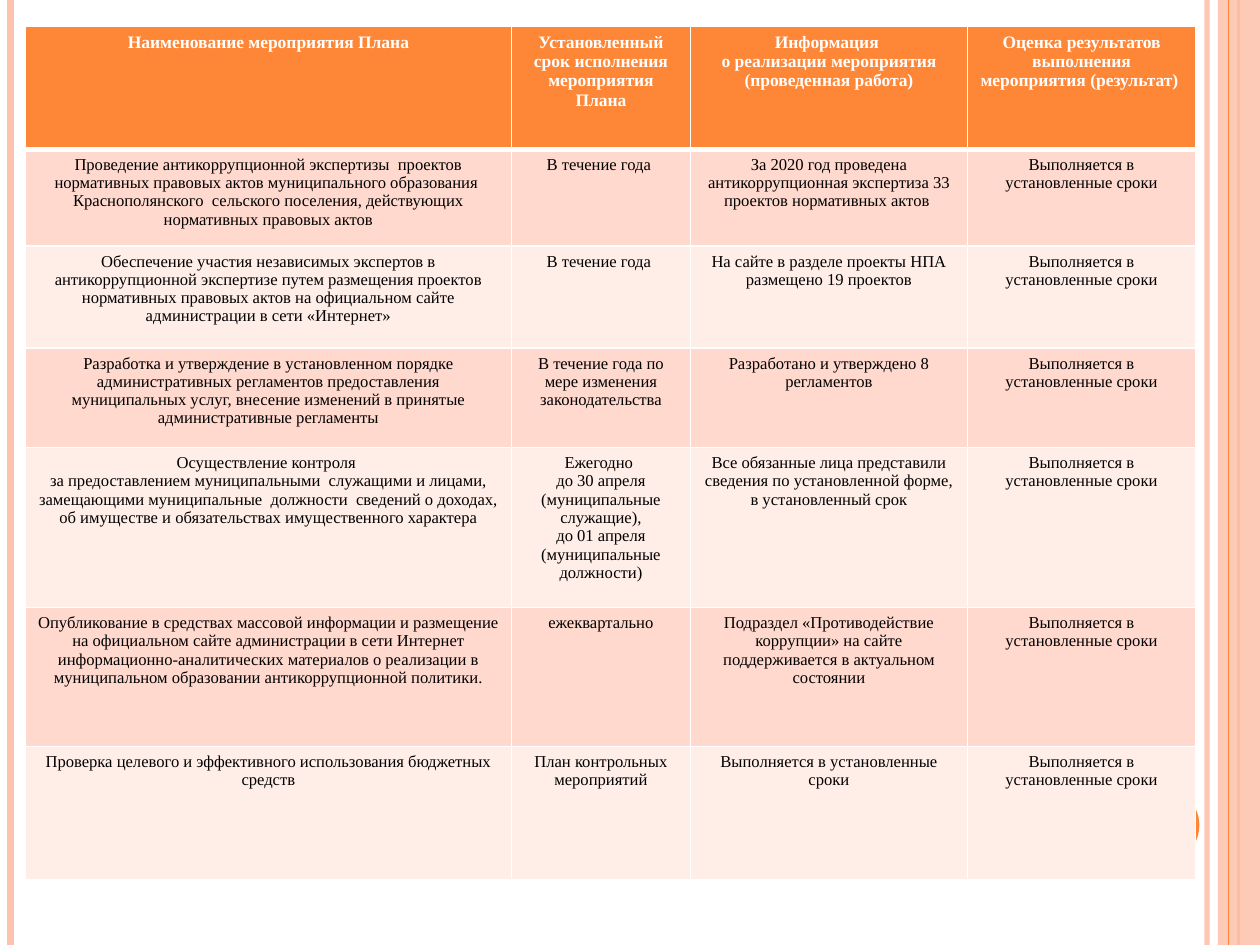
from lxml import etree
from pptx import Presentation
from pptx.dml.color import RGBColor
from pptx.enum.shapes import MSO_CONNECTOR, MSO_SHAPE
from pptx.enum.text import PP_ALIGN
from pptx.oxml.ns import qn
from pptx.util import Pt

STRAIGHT = MSO_CONNECTOR.STRAIGHT
RECT, OVAL = MSO_SHAPE.RECTANGLE, MSO_SHAPE.OVAL
CENTER = PP_ALIGN.CENTER

WHITE = RGBColor(0xFF, 0xFF, 0xFF)
BLACK = RGBColor(0x00, 0x00, 0x00)
ORANGE = RGBColor(0xFE, 0x86, 0x37)
PEACH = RGBColor(0xFE, 0xC3, 0xAE)
BAND_DARK = RGBColor(0xFF, 0xD9, 0xCE)
BAND_LIGHT = RGBColor(0xFF, 0xED, 0xE8)

FONT = "Times New Roman"
SLIDE_W, SLIDE_H = 720, 540
COL_WIDTHS = [277.9, 102.2, 158.4, 130.3]
ROW_HEIGHTS = [70.2, 55.4, 58.3, 56.9, 91.4, 79.2, 76.3]
ON_TIME = "Выполняется в установленные сроки"

# "\n" starts a paragraph, "\v" breaks a line
HEADER = [
    "Наименование мероприятия Плана",
    "Установленный срок исполнения мероприятия Плана",
    "Информация \vо реализации мероприятия (проведенная работа)",
    "Оценка результатов выполнения мероприятия (результат) ",
]
MEASURES = [
    ["Проведение антикоррупционной экспертизы  проектов нормативных правовых актов "
     "муниципального образования  Краснополянского  сельского поселения, действующих "
     "нормативных правовых актов",
     "В течение года ",
     "За 2020 год проведена антикоррупционная экспертиза 33 проектов нормативных актов "],
    ["Обеспечение участия независимых экспертов в антикоррупционной экспертизе путем "
     "размещения проектов нормативных правовых актов на официальном сайте "
     "администрации в сети «Интернет»",
     "В течение года ",
     "На сайте в разделе проекты НПА размещено 19 проектов"],
    ["Разработка и утверждение в установленном порядке административных регламентов "
     "предоставления муниципальных услуг, внесение изменений в принятые "
     "административные регламенты",
     "В течение года по мере изменения законодательства",
     "Разработано и утверждено 8 регламентов"],
    ["Осуществление контроля \nза предоставлением муниципальными  служащими и лицами, "
     "замещающими муниципальные  должности  сведений о доходах, об имуществе и "
     "обязательствах имущественного характера",
     "Ежегодно \nдо 30 апреля (муниципальные служащие),\nдо 01 апреля\n"
     "(муниципальные должности)",
     "Все обязанные лица представили сведения по установленной форме, "
     "в установленный срок"],
    ["Опубликование в средствах массовой информации и размещение на официальном сайте "
     "администрации в сети Интернет информационно-аналитических материалов о "
     "реализации в муниципальном образовании антикоррупционной политики.",
     "ежеквартально",
     "Подраздел «Противодействие коррупции» на сайте поддерживается в актуальном "
     "состоянии"],
    ["Проверка целевого и эффективного использования бюджетных средств",
     "План контрольных мероприятий",
     ON_TIME],
]


def write_text(tf, text, size, color, bold=False, align=CENTER):
    tf.word_wrap = True
    tf.text = text
    for p in tf.paragraphs:
        p.alignment = align
        for r in p.runs:
            r.font.name = FONT
            r.font.size = Pt(size)
            r.font.bold = bold
            r.font.color.rgb = color


def set_opacity(parent, percent):
    """Make the solid colour found under parent partly transparent."""
    clr = next(parent.iter(qn("a:srgbClr")))
    etree.SubElement(clr, qn("a:alpha"), val=str(percent * 1000))


def set_borders(cell, top, bottom, side=1):
    """Give the cell white borders of these widths in points."""
    tc_pr = cell._tc.get_or_add_tcPr()
    widths = [("lnL", side), ("lnR", side), ("lnT", top), ("lnB", bottom)]
    for i, (tag, width) in enumerate(widths):
        ln = etree.Element(qn(f"a:{tag}"), w=str(Pt(width)))
        fill = etree.SubElement(ln, qn("a:solidFill"))
        etree.SubElement(fill, qn("a:srgbClr"), val=str(WHITE))
        tc_pr.insert(i, ln)


def add_vertical_rule(s, x, color, width, opacity=100):
    line = s.shapes.add_connector(STRAIGHT, Pt(x), Pt(0), Pt(x), Pt(SLIDE_H))
    line.line.color.rgb = color
    line.line.width = Pt(width)
    sp_pr = line._element.spPr
    if opacity < 100:
        set_opacity(sp_pr, opacity)
    etree.SubElement(sp_pr, qn("a:effectLst"))


def add_plain_shape(s, kind, x, y, w, h, color):
    sp = s.shapes.add_shape(kind, Pt(x), Pt(y), Pt(w), Pt(h))
    sp.shadow.inherit = False
    sp.fill.solid()
    sp.fill.fore_color.rgb = color
    sp.line.fill.background()
    return sp


def add_side_stripes(s):
    add_vertical_rule(s, 689.8, PEACH, 3, opacity=93)
    add_vertical_rule(s, 6, PEACH, 4.5)
    add_vertical_rule(s, 707.8, ORANGE, 1.5)
    band = add_plain_shape(s, RECT, 696, 0, 24, SLIDE_H, PEACH)
    set_opacity(band._element.spPr, 87)
    add_vertical_rule(s, 702, ORANGE, 0.75)
    add_plain_shape(s, OVAL, 642.2, 450, 43.2, 43.2, ORANGE)


def add_plan_table(s, x, y):
    rows = [HEADER] + [measure + [ON_TIME] for measure in MEASURES]
    table = s.shapes.add_table(len(rows), len(HEADER), Pt(x), Pt(y),
                               Pt(sum(COL_WIDTHS)), Pt(sum(ROW_HEIGHTS))).table
    for column, width in zip(table.columns, COL_WIDTHS):
        column.width = Pt(width)
    for i, (texts, height) in enumerate(zip(rows, ROW_HEIGHTS)):
        table.rows[i].height = Pt(height)
        is_header = i == 0
        band = BAND_DARK if i % 2 else BAND_LIGHT
        for j, text in enumerate(texts):
            cell = table.cell(i, j)
            cell.fill.solid()
            cell.fill.fore_color.rgb = ORANGE if is_header else band
            set_borders(cell, top=3 if i == 1 else 1, bottom=3 if is_header else 1)
            write_text(cell.text_frame, text, size=10 if is_header else 9.5,
                       color=WHITE if is_header else BLACK, bold=is_header)


def main():
    prs = Presentation()
    prs.slide_width, prs.slide_height = Pt(SLIDE_W), Pt(SLIDE_H)
    s = prs.slides.add_slide(prs.slide_layouts[6])
    add_side_stripes(s)
    add_plan_table(s, 14.4, 15.1)
    prs.save("out.pptx")


if __name__ == "__main__":
    main()
